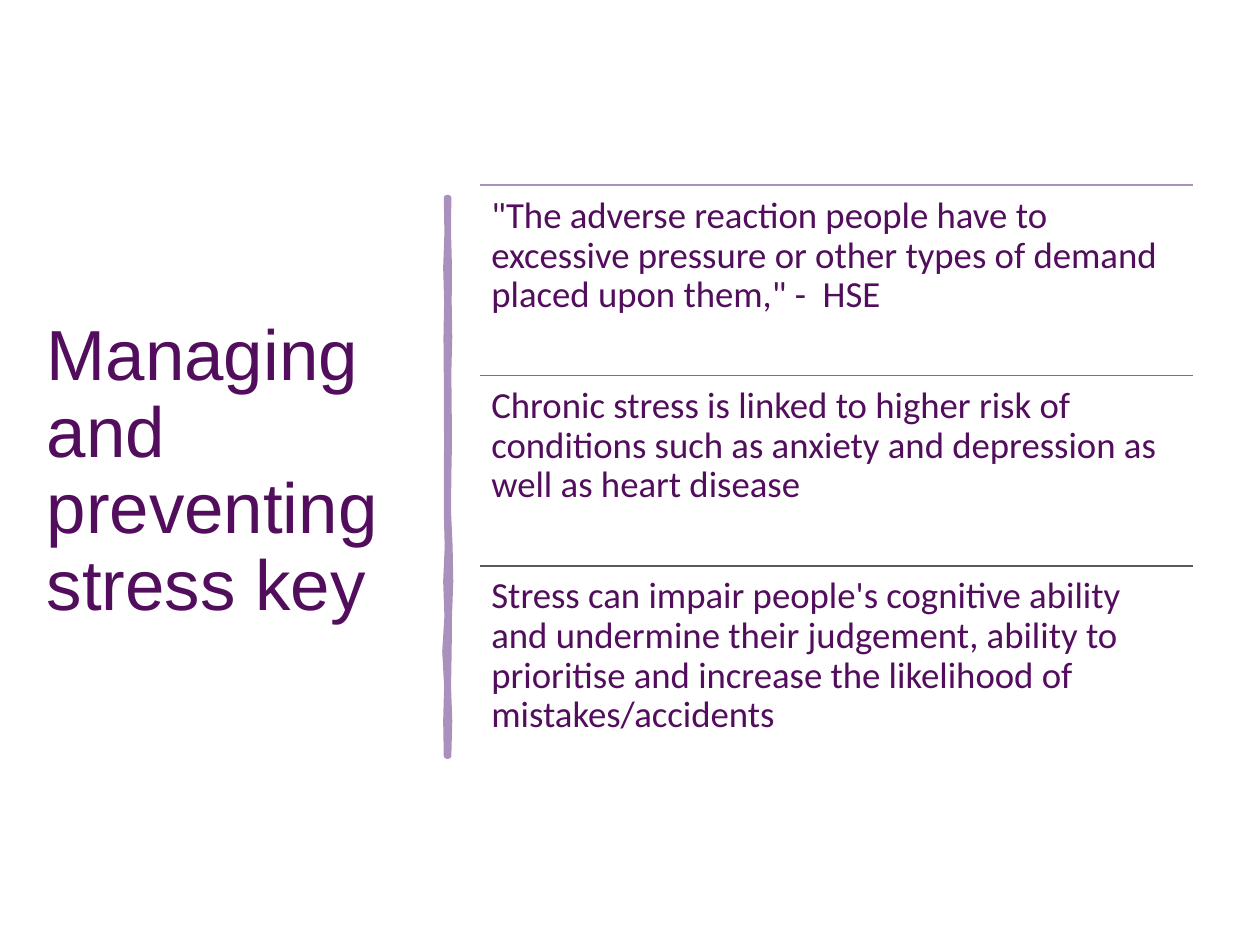
from pptx import Presentation
from pptx.dml.color import RGBColor
from pptx.enum.shapes import MSO_CONNECTOR
from pptx.enum.text import MSO_ANCHOR, MSO_AUTO_SIZE, PP_ALIGN
from pptx.oxml.ns import qn
from pptx.util import Inches, Pt
from lxml import etree

STRAIGHT = MSO_CONNECTOR.STRAIGHT
TOP, MIDDLE = MSO_ANCHOR.TOP, MSO_ANCHOR.MIDDLE
LEFT = PP_ALIGN.LEFT
NO_AUTOFIT = MSO_AUTO_SIZE.NONE

COLOURS = {"text": "520D5D", "lilac": "A991BC", "slate": "737090", "grey": "58595B"}
TITLE = "Managing and preventing stress key"
POINTS = [
    ("lilac", "\"The adverse reaction people have to excessive pressure or other "
              "types of demand placed upon them,\" -  HSE"),
    ("slate", "Chronic stress is linked to higher risk of conditions such as "
              "anxiety and depression as well as heart disease"),
    ("grey", "Stress can impair people's cognitive ability and undermine their "
             "judgement, ability to prioritise and increase the likelihood of "
             "mistakes/accidents"),
]
# Edges of the divider as shares of its width, at equal steps down its height
LEFT_WOBBLE = [0.3, 0.4, 0.2, 0.35, 0.25, 0.3, 0.3, 0.35, 0.3, 0.3, 0.45, 0.2, 0.4, 0.05, 0.35, 0.2, 0.3]
RIGHT_WOBBLE = [0.6, 0.55, 0.7, 0.65, 0.75, 0.6, 0.65, 0.7, 0.6, 0.55, 0.8, 0.9, 0.7, 0.65, 0.55, 0.75, 0.6]


def colour(name):
    return RGBColor.from_string(COLOURS[name])


def write(shape, text, font, size, anchor, inset):
    frame = shape.text_frame
    frame.word_wrap = True
    frame.auto_size = NO_AUTOFIT
    frame.vertical_anchor = anchor
    frame.margin_left = frame.margin_right = Inches(inset)
    frame.margin_top = frame.margin_bottom = Inches(inset)
    frame.text = text
    para = frame.paragraphs[0]
    para.alignment = LEFT
    para.line_spacing = 0.9
    para.space_before = Pt(0)
    para.font.name, para.font.size = font, Pt(size)
    para.font.color.rgb = colour("text")


def place_title(page, left, top, width, height):
    title = page.shapes.title
    title.left, title.top = Inches(left), Inches(top)
    title.width, title.height = Inches(width), Inches(height)
    write(title, TITLE, "Arial", 40.5, MIDDLE, 0.1)


def draw_divider(page, left, top, width, height):
    """Draw a vertical bar with uneven, hand-drawn edges."""
    step = height / (len(LEFT_WOBBLE) - 1)
    down, up = [
        [(Inches(left + width * share), Inches(top + step * row))
         for row, share in enumerate(edge)]
        for edge in (LEFT_WOBBLE, RIGHT_WOBBLE)
    ]
    outline = down + up[::-1]
    builder = page.shapes.build_freeform(*outline[0])
    builder.add_line_segments(outline[1:], close=True)
    bar = builder.convert_to_shape()
    bar.shadow.inherit = False
    bar.fill.solid()
    bar.fill.fore_color.rgb = colour("lilac")
    bar.line.color.rgb = colour("lilac")
    bar.line.width = Pt(3.25)


def draw_rule(page, left, top, width, shade):
    rule = page.shapes.add_connector(
        STRAIGHT, Inches(left), Inches(top), Inches(left + width), Inches(top))
    rule.line.color.rgb = colour(shade)
    rule.line.width = Pt(1)
    etree.SubElement(rule._element.spPr, qn("a:effectLst"))


def place_points(page, left, top, width, height):
    row_height = height / len(POINTS)
    for row, (shade, text) in enumerate(POINTS):
        row_top = top + row * row_height
        draw_rule(page, left, row_top, width, shade)
        box = page.shapes.add_textbox(
            Inches(left), Inches(row_top), Inches(width), Inches(row_height))
        write(box, text, "Calibri", 21, TOP, 0.09)


def main():
    deck = Presentation()
    deck.slide_width, deck.slide_height = Inches(10), Inches(7.5)
    page = deck.slides.add_slide(deck.slide_layouts[5])
    place_title(page, 0.27, 1.46, 3.09, 4.58)
    draw_divider(page, 3.53, 1.57, 0.05, 4.43)
    place_points(page, 3.81, 1.47, 5.66, 4.53)
    deck.save("out.pptx")


if __name__ == "__main__":
    main()
